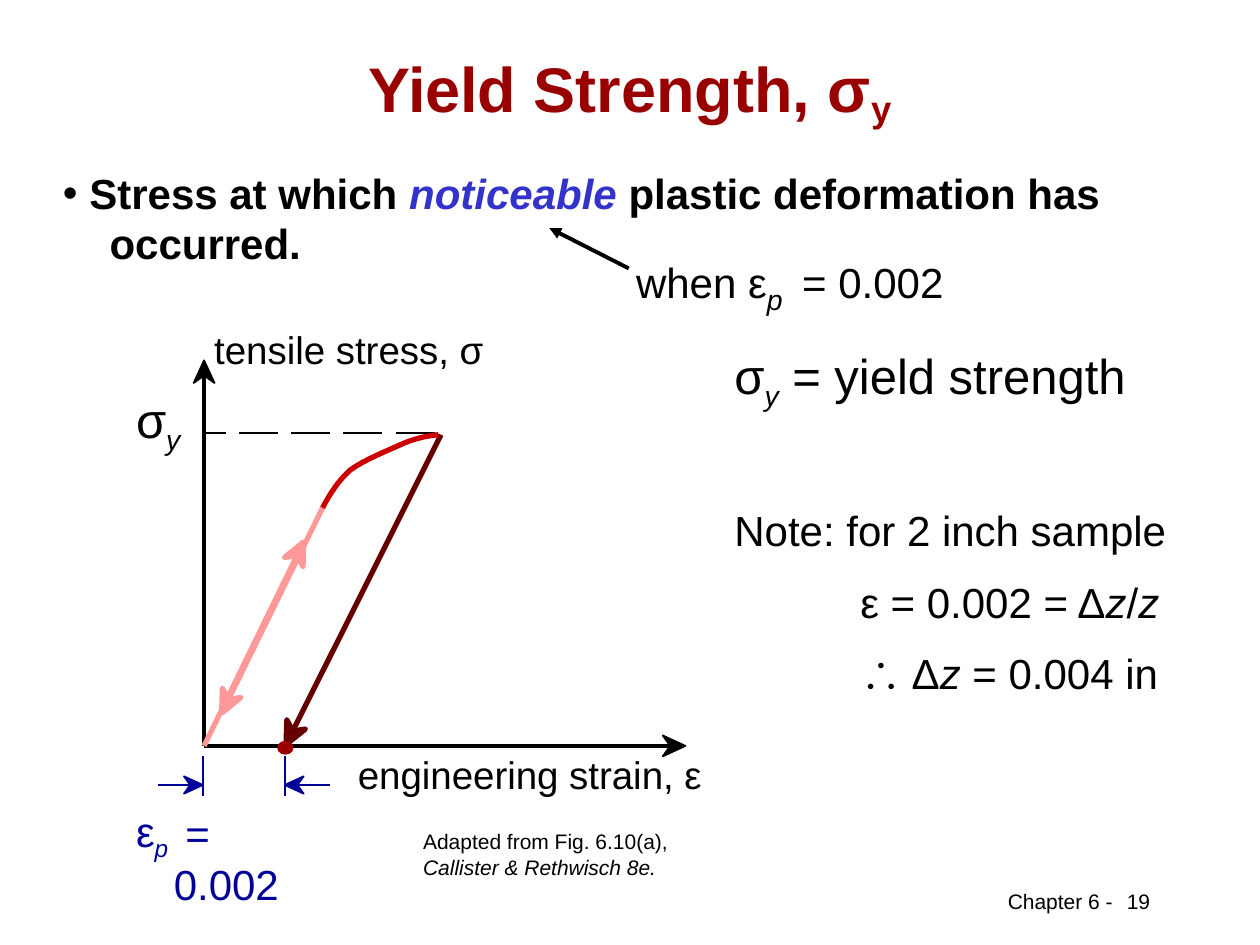
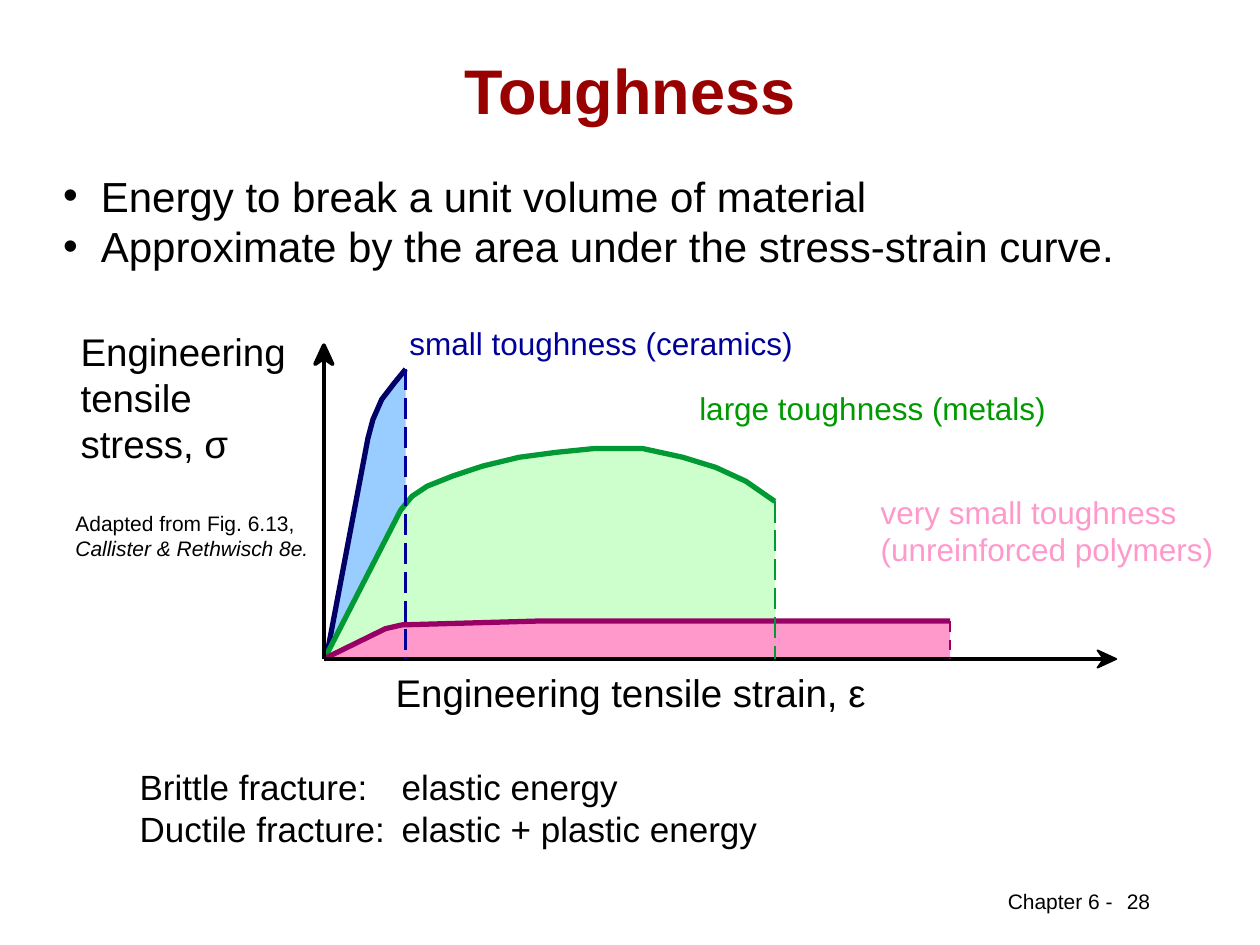
from dataclasses import dataclass
from math import hypot

from lxml.etree import SubElement
from pptx import Presentation
from pptx.dml.color import RGBColor
from pptx.enum.dml import MSO_LINE_DASH_STYLE as Dash
from pptx.enum.shapes import MSO_CONNECTOR as Connector, MSO_SHAPE as Shape
from pptx.enum.text import MSO_ANCHOR as Anchor, MSO_AUTO_SIZE as AutoSize, PP_ALIGN as Align
from pptx.oxml.ns import qn
from pptx.util import Inches, Pt

COLUMNS, ROWS = 100, 75
WIDTH, HEIGHT = Inches(10), Inches(7.5)
FONT = "Arial"

BLACK = RGBColor(0x00, 0x00, 0x00)
TITLE_RED = RGBColor(0x99, 0x00, 0x00)
CURVE_RED = RGBColor(0xCC, 0x00, 0x00)
UNLOAD_RED = RGBColor(0x66, 0x00, 0x00)
ELASTIC_PINK = RGBColor(0xFF, 0x99, 0x99)
STRESS_BLUE = RGBColor(0x33, 0x33, 0xCC)
BLUE = RGBColor(0x00, 0x00, 0x99)
NAVY = RGBColor(0x00, 0x00, 0x66)
SKY = RGBColor(0x99, 0xCC, 0xFF)
MINT = RGBColor(0xCC, 0xFF, 0xCC)
GREEN = RGBColor(0x00, 0x99, 0x33)
LABEL_GREEN = RGBColor(0x00, 0x99, 0x00)
ROSE = RGBColor(0xFF, 0x99, 0xCC)
PLUM = RGBColor(0x99, 0x00, 0x66)


@dataclass
class Span:
    text: str
    size: float = None
    color: RGBColor = None
    italic: bool = False
    drop: int = 0


@dataclass
class Para:
    spans: list
    indent: float = 0
    bullet: bool = False
    before: float = 0
    tab: float = 0


def col(value):
    return round(value * WIDTH / COLUMNS)


def row(value):
    return round(value * HEIGHT / ROWS)


def bezier(start, first, second, end, steps=8):
    for step in range(1, steps + 1):
        t = step / steps
        s = 1 - t
        yield tuple(s**3 * a + 3 * s * s * t * b + 3 * s * t * t * c + t**3 * d
                    for a, b, c, d in zip(start, first, second, end))


class Deck:
    def __init__(self):
        self.deck = Presentation()
        self.deck.slide_width, self.deck.slide_height = WIDTH, HEIGHT
        self.page = None

    def add_page(self, number, title):
        self.page = self.deck.slides.add_slide(self.deck.slide_layouts[5])
        box = self.page.shapes.title
        box.left, box.top, box.width, box.height = col(7.5), row(4.2), col(85), row(5.8)
        frame = box.text_frame
        frame.word_wrap, frame.auto_size = True, AutoSize.NONE
        frame.vertical_anchor = Anchor.MIDDLE
        self.fill_para(frame.paragraphs[0], Para(title), 36, TITLE_RED, True, Align.CENTER)
        self.text((79, 70, 11, 3), ["Chapter 6 -"], 12, padded=True)
        self.text((83.9, 70, 12.9, 3.9), [str(number)], 12, padded=True, align=Align.CENTER)

    def fill_para(self, para, content, size, color, bold, align):
        para.alignment = align
        if content.before:
            para.space_before = Pt(content.before)
        props = para._p.get_or_add_pPr()
        if content.indent:
            props.set("marL", str(col(content.indent)))
            props.set("indent", str(-col(content.indent) if content.bullet else 0))
        if content.bullet:
            SubElement(props, qn("a:buFont")).set("typeface", FONT)
            SubElement(props, qn("a:buChar")).set("char", "•")
        if content.tab:
            tab = SubElement(SubElement(props, qn("a:tabLst")), qn("a:tab"))
            tab.set("pos", str(col(content.tab)))
            tab.set("algn", "l")
        for part in content.spans:
            part = Span(part) if isinstance(part, str) else part
            span = para.add_run()
            span.text = part.text
            font = span.font
            font.name, font.size = FONT, Pt(part.size or size)
            font.bold, font.italic = bold, part.italic
            font.color.rgb = part.color or color
            if part.drop:
                span._r.get_or_add_rPr().set("baseline", str(-1000 * part.drop))

    def text(self, at, paras, size, color=BLACK, bold=False, padded=False, align=Align.LEFT):
        left, top, width, height = at
        box = self.page.shapes.add_textbox(col(left), row(top), col(width), row(height))
        frame = box.text_frame
        frame.word_wrap = True
        frame.margin_left = frame.margin_right = col(1) if padded else 0
        frame.margin_top = frame.margin_bottom = row(0.5) if padded else 0
        for index, content in enumerate(paras):
            para = frame.add_paragraph() if index else frame.paragraphs[0]
            if isinstance(content, str):
                content = Para([content])
            self.fill_para(para, content, size, color, bold, align)

    def paint(self, shape, fill, line, weight):
        shape.shadow.inherit = False
        if fill is None:
            shape.fill.background()
        else:
            shape.fill.solid()
            shape.fill.fore_color.rgb = fill
        if line is None:
            shape.line.fill.background()
        else:
            shape.line.color.rgb = line
            shape.line.width = Pt(weight)

    def shape(self, kind, at, fill):
        left, top, width, height = at
        shape = self.page.shapes.add_shape(kind, col(left), row(top), col(width), row(height))
        self.paint(shape, fill, None, 0)

    def outline(self, points, fill=None, line=None, weight=3):
        start, *rest = [(col(x), row(y)) for x, y in points]
        builder = self.page.shapes.build_freeform(*start)
        builder.add_line_segments(rest, close=fill is not None)
        self.paint(builder.convert_to_shape(), fill, line, weight)

    def line(self, start, end, color, weight, dash=None, arrow=False):
        link = self.page.shapes.add_connector(
            Connector.STRAIGHT, col(start[0]), row(start[1]), col(end[0]), row(end[1]))
        link.line.color.rgb, link.line.width = color, Pt(weight)
        if dash:
            link.line.dash_style = dash
        if arrow:
            SubElement(link.line._get_or_add_ln(), qn("a:tailEnd")).set("type", "triangle")
        SubElement(link._element.spPr, qn("a:effectLst"))

    def barbed_arrow(self, start, tip, color, weight, size=1.8, edge=None):
        dx, dy = tip[0] - start[0], tip[1] - start[1]
        length = hypot(dx, dy)
        dx, dy = dx / length * size, dy / length * size
        notch = (tip[0] - dx * 0.67, tip[1] - dy * 0.67)
        barbs = [(tip[0] - dx + side * dy, tip[1] - dy - side * dx) for side in (-0.46, 0.46)]
        self.outline([tip, barbs[0], notch, barbs[1]], color, color, edge or weight)
        self.line(start, notch, color, weight)


def build_yield_strength(deck):
    deck.add_page(19, ["Yield Strength, σ", Span("y", drop=15)])
    deck.text((5, 13.3, 91.7, 8), [
        Para(["Stress at which ", Span("noticeable ", color=STRESS_BLUE, italic=True),
              "plastic deformation has"], indent=2.1, bullet=True),
        Para(["occurred."], indent=3.7)], 24, bold=True)
    deck.line((49.9, 21.3), (43.6, 18.1), BLACK, 2.25, arrow=True)
    deck.text((49.5, 19.3, 30, 5), [
        Para(["when ε", Span("p ", size=28, italic=True, drop=25), " = 0.002"])], 24, padded=True)
    z = Span("z", italic=True)
    deck.text((57.3, 26.9, 38.2, 29.6), [
        Para([Span("σ", 28), Span("y", 28, italic=True, drop=25), Span(" = yield strength", 28)]),
        Para(["Note: for 2 inch sample"], before=53),
        Para(["ε = 0.002 = Δ", z, "/", z], indent=10, before=12),
        Para(["∴ Δ", z, " = 0.004 in"], indent=10, before=12)], 24, padded=True)
    deck.text((32.6, 65.3, 24, 5.1), [
        "Adapted from Fig. 6.10(a),",
        Para([Span("Callister & Rethwisch 8e.", italic=True)])], 12, padded=True)

    origin, knee, peak, offset = (16.2, 59.2), (25.6, 40.3), (35, 34.5), (22.7, 59.1)
    deck.barbed_arrow(origin, (16.2, 28.6), BLACK, 2, edge=1)
    deck.barbed_arrow(origin, (54.4, 59.2), BLACK, 2, edge=1)
    deck.barbed_arrow(origin, (24.1, 43), ELASTIC_PINK, 3)
    deck.barbed_arrow(knee, (17.6, 56.6), ELASTIC_PINK, 3)
    deck.barbed_arrow(peak, offset, UNLOAD_RED, 3)
    deck.shape(Shape.OVAL, (22, 58.8, 1.3, 1.1), TITLE_RED)
    deck.text((17, 25.9, 24, 3.7), ["tensile stress, σ"], 22)
    deck.text((28.4, 59.6, 30, 3.7), ["engineering strain, ε"], 22)

    for edge, outward in ((16.1, -1), (22.6, 1)):
        deck.line((edge, 60), (edge, 63.2), BLUE, 1)
        deck.barbed_arrow((edge + 3.6 * outward, 62.3), (edge, 62.3), BLUE, 1, size=1.5)
    for index in range(5):
        right = 34.5 - 4.15 * index
        deck.line((right, 34.35), (max(right - 3.1, origin[0]), 34.35), BLACK, 1)

    deck.text((10.8, 30.9, 5, 4.7), [Para(["σ", Span("y", italic=True, drop=25)])], 28)
    deck.text((10.8, 63.9, 3, 4), [Para(["ε", Span("p", italic=True, drop=25)])], 24, BLUE)
    deck.text((13.8, 64.1, 10, 8), [" = 0.002"], 24, BLUE)
    middle = (27.8, 37.3)
    bend = (32, 35.2)
    deck.outline([knee, *bezier(knee, (26.2, 39.2), (26.8, 38.2), middle),
                  *bezier(middle, (28.9, 36.5), (30.9, 35.7), bend),
                  *bezier(bend, (33.2, 34.7), (34, 34.6), (34.8, 34.5))], line=CURVE_RED)


def build_toughness(deck):
    deck.add_page(28, ["Toughness"])
    deck.text((5, 13.5, 89.8, 8), [
        Para([line], indent=3, bullet=True) for line in (
            "Energy to break a unit volume of material",
            "Approximate by the area under the stress-strain curve.")], 24)
    deck.text((10.1, 60.3, 71.4, 7.7), [
        Para([line], tab=20.8) for line in (
            "Brittle fracture:\telastic energy",
            "Ductile fracture:\telastic + plastic energy")], 20, padded=True)
    deck.text((5, 40, 22.5, 5), [
        Para(["Adapted from Fig. 6.13, ", Span("Callister & Rethwisch 8e.", italic=True)])],
        12, padded=True)

    base = 52.3
    origin = (25.7, base)
    ceramic = [(25.9, 52.2), (29.2, 34.8), (29.6, 33.3), (30.3, 31.7), (31.3, 30.4), (32.2, 29.3)]
    metal = [(25.8, 52.2), (31.8, 40.5), (32.7, 39.4), (33.9, 38.6), (35.9, 37.8), (38.3, 37),
             (41.2, 36.3), (44.2, 35.9), (47.2, 35.6), (51, 35.6), (54.2, 36.3), (56.8, 37.1),
             (59.2, 38.2), (61.5, 39.8)]
    polymer = [(25.7, base), (30.6, 49.9), (31.9, 49.6), (35.5, 49.5), (42.5, 49.3), (75.4, 49.3)]

    for curve, fill in ((ceramic, SKY), (metal, MINT)):
        deck.outline([*curve, (curve[-1][0], base), origin], fill)
    deck.text((69.9, 39.1, 29, 6), ["very small toughness", "(unreinforced polymers)"], 18, ROSE)
    deck.text((31.4, 53.1, 42, 3.7), ["Engineering tensile strain, ε"], 22)
    deck.text((6.4, 26, 18, 11), ["Engineering", "tensile", "stress, σ"], 22)
    deck.outline(ceramic, line=NAVY)
    deck.text((32.5, 25.7, 34, 3), ["small toughness (ceramics)"], 18, BLUE)
    deck.outline(metal, line=GREEN)
    deck.text((55.5, 30.9, 32, 3), ["large toughness (metals)"], 18, LABEL_GREEN)
    deck.outline([*polymer, (polymer[-1][0], base)], ROSE)
    deck.outline(polymer, line=PLUM)

    deck.barbed_arrow(origin, (88.6, base), BLACK, 2.25, size=1.5, edge=1)
    deck.barbed_arrow(origin, (25.7, 27.4), BLACK, 2.25, size=1.5)
    for curve, color, dash in ((ceramic, BLUE, Dash.LONG_DASH), (metal, GREEN, Dash.LONG_DASH),
                               (polymer, PLUM, Dash.DASH)):
        end = curve[-1]
        deck.line(end, (end[0], base), color, 1.5, dash)


def main():
    deck = Deck()
    build_yield_strength(deck)
    build_toughness(deck)
    deck.deck.save("out.pptx")


if __name__ == "__main__":
    main()
